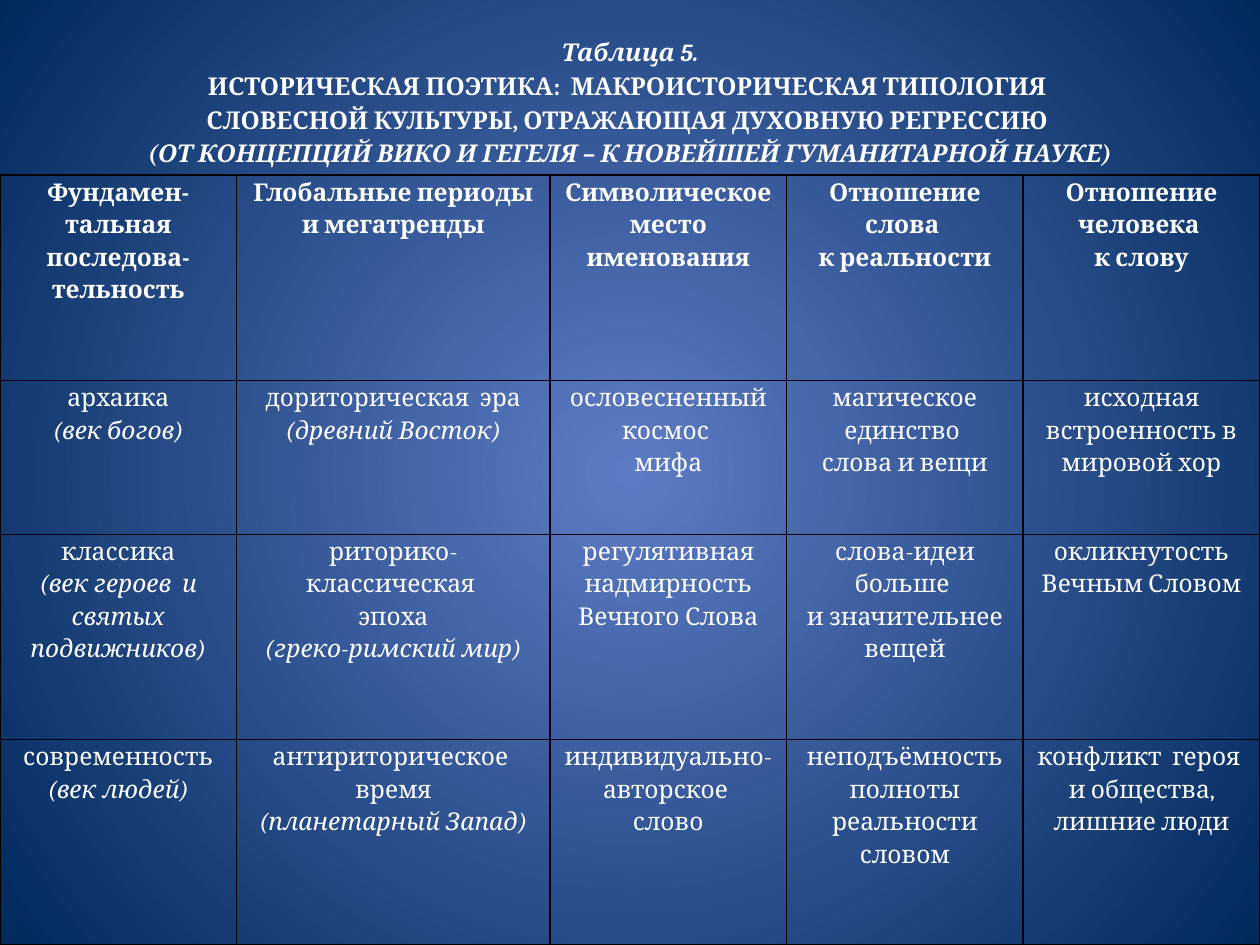
import pptx
import pptx.util
import pptx.dml.color
import pptx.enum.text
import pptx.oxml.ns
from lxml import etree

Cm, Pt, qn = pptx.util.Cm, pptx.util.Pt, pptx.oxml.ns.qn
RGBColor = pptx.dml.color.RGBColor
WHITE = RGBColor(0xFF, 0xFF, 0xFF)
BLACK = RGBColor(0, 0, 0)
BLUE = RGBColor(0x5E, 0x7C, 0xC5)
NAVY = RGBColor(0x00, 0x29, 0x5C)


def write(tf, lines, bold, italic_lines):
    """Fill a text frame, one centred paragraph per line."""
    tf.text = "\n".join(lines)
    for i, p in enumerate(tf.paragraphs):
        p.alignment = pptx.enum.text.PP_ALIGN.CENTER
        p.line_spacing = 1.15
        font = p.runs[0].font
        font.color.rgb = WHITE
        style = {"name": "Cambria", "size": Pt(14), "bold": bold, "italic": i in italic_lines}
        for name, value in style.items():
            setattr(font, name, value)


def add_borders(cell):
    """Draw a thin black line on all four sides of a cell."""
    tcPr = cell._tc.get_or_add_tcPr()
    for i, side in enumerate(("a:lnL", "a:lnR", "a:lnT", "a:lnB")):
        ln = etree.Element(qn(side), w=str(Pt(1)))
        fill = etree.SubElement(ln, qn("a:solidFill"))
        etree.SubElement(fill, qn("a:srgbClr"), val=str(BLACK))
        tcPr.insert(i, ln)


prs = pptx.Presentation()
prs.slide_width, prs.slide_height = Cm(25.4), Cm(19.05)
s = prs.slides.add_slide(prs.slide_layouts[5])

# Background: radial gradient from the centre
s.background.fill.gradient()
for stop, color in zip(s.background.fill.gradient_stops, (BLUE, NAVY)):
    stop.color.rgb = color
grad = s.element.find(".//" + qn("a:gradFill"))
grad.remove(grad.find(qn("a:lin")))
circle = etree.SubElement(grad, qn("a:path"))
circle.set("path", "circle")
etree.SubElement(circle, qn("a:fillToRect"), dict.fromkeys("ltrb", "50000"))

# Title
title = s.shapes.title
title.left, title.top, title.width, title.height = Cm(0), Cm(0.53), Cm(25.4), Cm(3)
title.text_frame.auto_size = pptx.enum.text.MSO_AUTO_SIZE.SHAPE_TO_FIT_TEXT
title.text_frame.vertical_anchor = pptx.enum.text.MSO_ANCHOR.TOP
write(title.text_frame, [
    "Таблица 5.",
    "ИСТОРИЧЕСКАЯ ПОЭТИКА:  МАКРОИСТОРИЧЕСКАЯ ТИПОЛОГИЯ ",
    "СЛОВЕСНОЙ КУЛЬТУРЫ, ОТРАЖАЮЩАЯ ДУХОВНУЮ РЕГРЕССИЮ ",
    "(ОТ КОНЦЕПЦИЙ ВИКО И ГЕГЕЛЯ – К НОВЕЙШЕЙ ГУМАНИТАРНОЙ НАУКЕ)",
], True, (0, 3))

# Table: each cell is a list of paragraphs
rows = [
    [["Фундамен-", "тальная последова-", "тельность"],
     ["Глобальные периоды и мегатренды"],
     ["Символическое место именования"],
     ["Отношение слова ", "к реальности"],
     ["Отношение человека ", "к слову"]],
    [["архаика", "(век богов)"],
     ["дориторическая  эра", "(древний Восток)"],
     ["ословесненный космос ", "мифа"],
     ["магическое единство ", "слова и вещи"],
     ["исходная встроенность в мировой хор"]],
    [["классика", "(век героев  и святых подвижников)"],
     ["риторико-классическая ", "эпоха", "(греко-римский мир)"],
     ["регулятивная", "надмирность Вечного Слова"],
     ["слова-идеи больше ", "и значительнее вещей"],
     ["окликнутость Вечным Словом"]],
    [["современность", "(век людей)"],
     ["антириторическое  время", "(планетарный Запад)"],
     ["индивидуально-авторское ", "слово"],
     ["неподъёмность полноты реальности словом"],
     ["конфликт  героя ", "и общества, лишние люди"]],
]
table = s.shapes.add_table(4, 5, Cm(0), Cm(3.53), Cm(25.4), Cm(15.52)).table
table.first_row = table.horz_banding = False
for column, width in zip(table.columns, (4.77, 6.32, 4.77, 4.77, 4.77)):
    column.width = Cm(width)
for row, height in zip(table.rows, (4.14, 3.1, 4.14, 4.14)):
    row.height = Cm(height)

margins = {"margin_left": Cm(0.18), "margin_right": Cm(0.18), "margin_top": 0, "margin_bottom": 0}
for r, row in enumerate(rows):
    for c, lines in enumerate(row):
        cell = table.cell(r, c)
        for name, value in margins.items():
            setattr(cell, name, value)
        cell.fill.background()
        add_borders(cell)
        bracketed = [i for i, line in enumerate(lines) if line.startswith("(")]
        write(cell.text_frame, lines, r == 0, bracketed)

prs.save("out.pptx")
